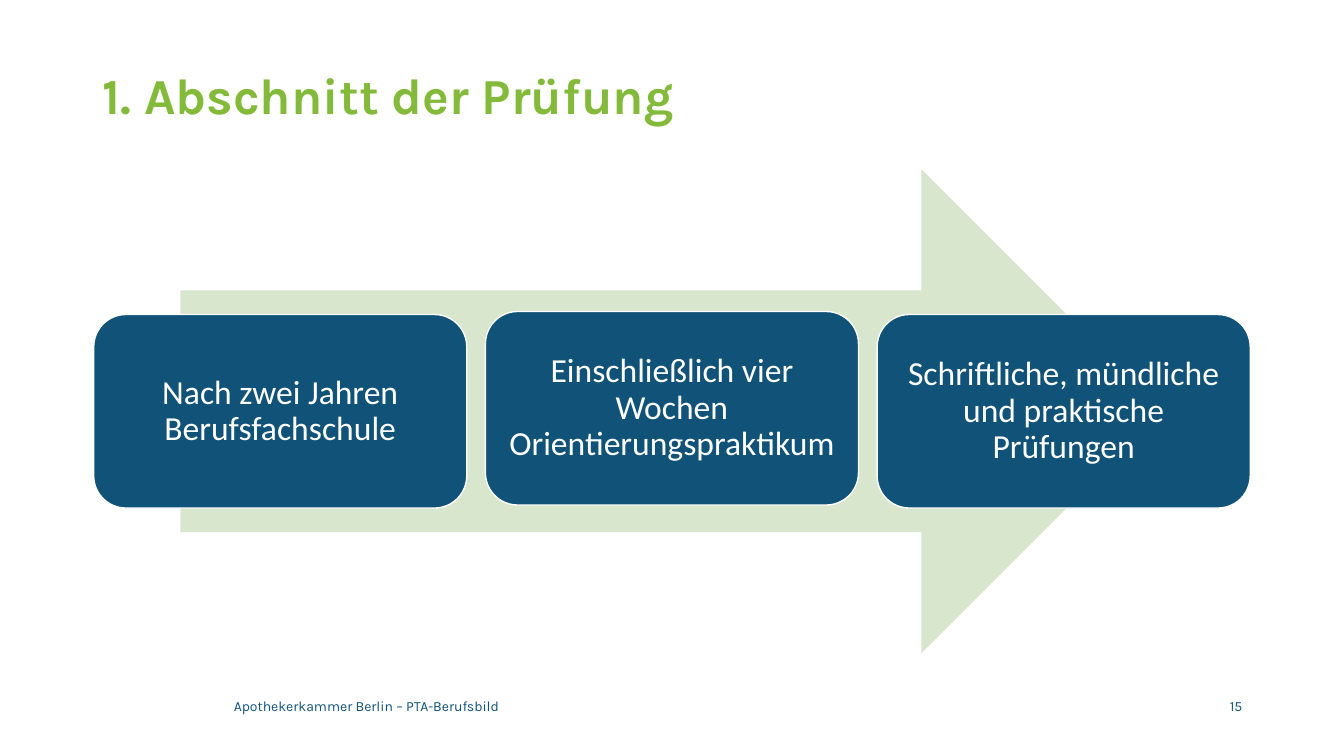
from pptx import Presentation
from pptx.dml.color import RGBColor
from pptx.enum.shapes import MSO_SHAPE
from pptx.enum.text import MSO_ANCHOR, PP_ALIGN
from pptx.util import Inches, Pt

COLORS = {"green": "83BA3A", "pale_green": "D9E6CE", "blue": "105278", "white": "FFFFFF"}
HEADING_FONT, BODY_FONT = "Karla", "Calibri"
LEFT, CENTER, RIGHT = PP_ALIGN.LEFT, PP_ALIGN.CENTER, PP_ALIGN.RIGHT
MIDDLE = MSO_ANCHOR.MIDDLE
ARROW, ROUNDED = MSO_SHAPE.RIGHT_ARROW, MSO_SHAPE.ROUNDED_RECTANGLE

STEPS = [  # text, vertical shift from the row
    ("Nach zwei Jahren Berufsfachschule", 0),
    ("Einschließlich vier Wochen Orientierungspraktikum", -0.03),
    ("Schriftliche, mündliche und praktische Prüfungen", 0),
]


def color(name):
    return RGBColor.from_string(COLORS[name])


def write(shape, text, size, ink, font=HEADING_FONT, bold=False, align=LEFT,
          line_spacing=1.0, margin=0.05):
    """Put one formatted paragraph into a shape, centred vertically."""
    frame = shape.text_frame
    frame.word_wrap = True
    frame.vertical_anchor = MIDDLE
    frame.margin_left = frame.margin_right = Inches(0.1)
    frame.margin_top = frame.margin_bottom = Inches(margin)
    paragraph = frame.paragraphs[0]
    paragraph.text = text
    paragraph.alignment = align
    paragraph.line_spacing = line_spacing
    paragraph.font.name = font
    paragraph.font.size = Pt(size)
    paragraph.font.bold = bold
    paragraph.font.color.rgb = color(ink)


def add_text(slide, box, text, **style):
    write(slide.shapes.add_textbox(*map(Inches, box)), text, **style)


def add_filled(slide, kind, box, fill, line=None):
    shape = slide.shapes.add_shape(kind, *map(Inches, box))
    shape.shadow.inherit = False
    shape.fill.solid()
    shape.fill.fore_color.rgb = color(fill)
    if line:
        shape.line.color.rgb = color(line)
        shape.line.width = Pt(1)
    else:
        shape.line.fill.background()
    return shape


def add_process(slide, box):
    """Arrow across 85 % of the box with the steps in a row over it."""
    left, top, width, height = box
    arrow_width = width * 0.85
    add_filled(slide, ARROW, (left + (width - arrow_width) / 2, top, arrow_width, height),
               "pale_green")
    step_width, step_height = 3.7, height * 0.4
    pitch = (width - step_width) / (len(STEPS) - 1)
    step_top = top + (height - step_height) / 2
    for index, (text, shift) in enumerate(STEPS):
        step = add_filled(slide, ROUNDED,
                          (left + index * pitch, step_top + shift, step_width, step_height),
                          "blue", line="white")
        write(step, text, size=24, ink="white", font=BODY_FONT, align=CENTER,
              line_spacing=0.9, margin=0.1)


def add_footer(slide, box):
    left, top, width, height = box
    number_width = 1.44
    add_text(slide, (left, top, 8.71, height), "Apothekerkammer Berlin – PTA-Berufsbild",
             size=10, ink="blue")
    add_text(slide, (left + width - number_width, top, number_width, height), "15",
             size=10, ink="blue", align=RIGHT)


def main():
    presentation = Presentation()
    presentation.slide_width = Inches(13.33)
    presentation.slide_height = Inches(7.5)
    slide = presentation.slides.add_slide(presentation.slide_layouts[6])
    add_text(slide, (0.92, 0.4, 11.5, 1.14), "1. Abschnitt der Prüfung",
             size=36, ink="green", bold=True, line_spacing=0.9)
    add_process(slide, (0.93, 1.68, 11.47, 4.8))
    add_footer(slide, (2.22, 6.8, 10.2, 0.4))
    presentation.save("out.pptx")


if __name__ == "__main__":
    main()
